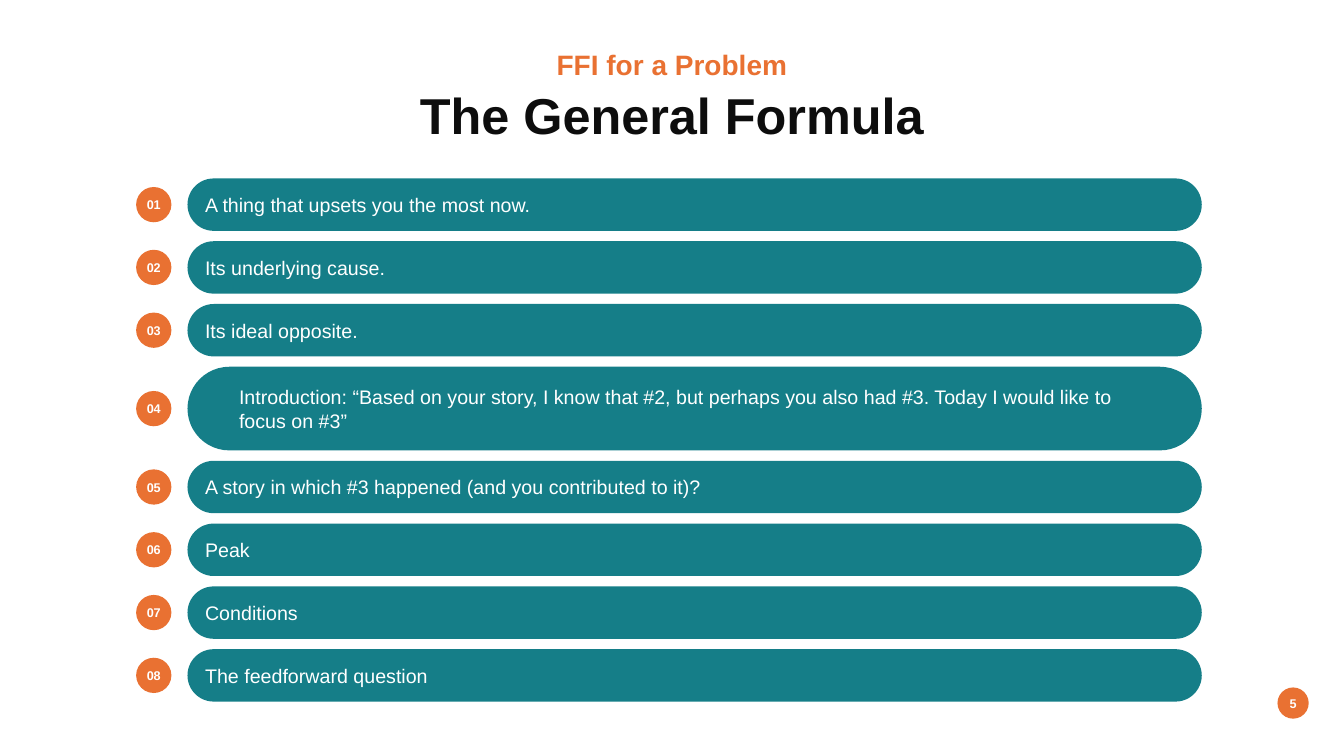
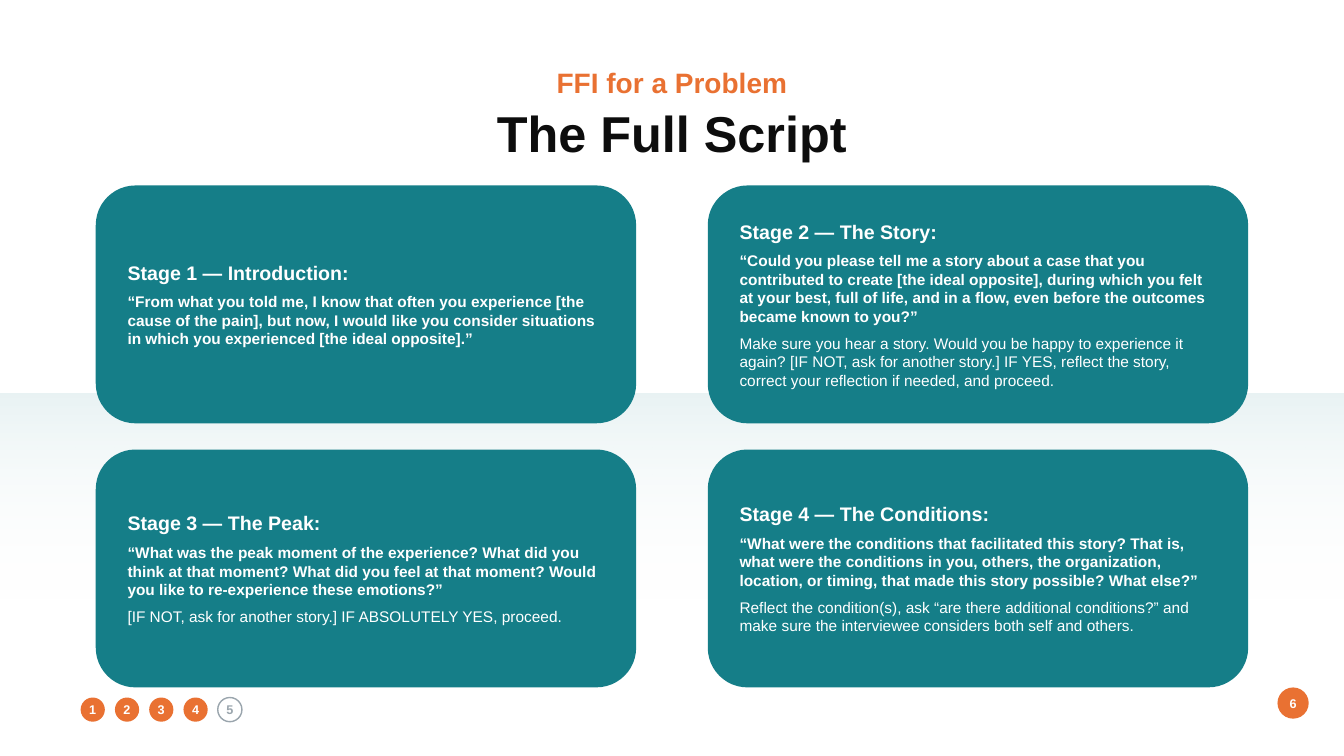
from dataclasses import dataclass

from pptx import Presentation
from pptx.dml.color import RGBColor
from pptx.enum.shapes import MSO_SHAPE
from pptx.enum.text import MSO_ANCHOR, MSO_AUTO_SIZE, PP_ALIGN
from pptx.oxml.ns import qn
from pptx.util import Pt

PX = 9144
RECT, ROUND, OVAL = MSO_SHAPE.RECTANGLE, MSO_SHAPE.ROUNDED_RECTANGLE, MSO_SHAPE.OVAL
MIDDLE, GROW = MSO_ANCHOR.MIDDLE, MSO_AUTO_SIZE.SHAPE_TO_FIT_TEXT
LEFT, CENTER = PP_ALIGN.LEFT, PP_ALIGN.CENTER
SIDES = ("margin_left", "margin_top", "margin_right", "margin_bottom")


@dataclass(frozen=True)
class Theme:
    font: str = "Arial"
    teal: str = "157E88"
    orange: str = "E97132"
    ink: str = "0D0D0D"
    grey: str = "9AA5AD"
    white: str = "FFFFFF"
    title: int = 36
    kicker: int = 20
    body: int = 14
    note: int = 11
    badge: int = 9


T = Theme()
SLIDE_W, SLIDE_H = 1333, 750
KICKER = "FFI for a Problem"

STEPS = [
    "A thing that upsets you the most now.",
    "Its underlying cause.",
    "Its ideal opposite.",
    "Introduction: “Based on your story, I know that #2, but perhaps you also had #3. "
    "Today I would like to focus on #3”",
    "A story in which #3 happened (and you contributed to it)?",
    "Peak",
    "Conditions",
    "The feedforward question",
]
TALL_STEP = 3

STAGES = [
    ("Stage 1 — Introduction:",
     "“From what you told me, I know that often you experience [the cause of the pain], "
     "but now, I would like you consider situations in which you experienced "
     "[the ideal opposite].”"),
    ("Stage 2 — The Story:",
     "“Could you please tell me a story about a case that you contributed to create "
     "[the ideal opposite], during which you felt at your best, full of life, and in a flow, "
     "even before the outcomes became known to you?”",
     "Make sure you hear a story. Would you be happy to experience it again? "
     "[IF NOT, ask for another story.] IF YES, reflect the story, correct your reflection "
     "if needed, and proceed."),
    ("Stage 3 — The Peak:",
     "“What was the peak moment of the experience? What did you think at that moment? "
     "What did you feel at that moment? Would you like to re-experience these emotions?”",
     "[IF NOT, ask for another story.] IF ABSOLUTELY YES, proceed."),
    ("Stage 4 — The Conditions:",
     "“What were the conditions that facilitated this story? That is, what were the "
     "conditions in you, others, the organization, location, or timing, that made this "
     "story possible? What else?”",
     "Reflect the condition(s), ask “are there additional conditions?” and make sure "
     "the interviewee considers both self and others."),
]


def emu(*lengths):
    return [round(n * PX) for n in lengths]


def assign(obj, values):
    for name, value in values.items():
        setattr(obj, name, value)


def write(tf, lines, align=LEFT, gap=0):
    for i, (text, size, color, bold) in enumerate(lines):
        p = tf.add_paragraph() if i else tf.paragraphs[0]
        before = Pt(gap if i else 0)
        assign(p, {"alignment": align, "space_before": before, "space_after": Pt(gap)})
        r = p.add_run()
        r.text = text
        assign(r.font, {"name": T.font, "size": Pt(size), "bold": bold})
        r.font.color.rgb = RGBColor.from_string(color)


def add_shape(slide, kind, box, fill=None, line=None, insets=(10, 5, 10, 5)):
    sp = slide.shapes.add_shape(kind, *emu(*box))
    sp.shadow.inherit = False
    if fill:
        sp.fill.solid()
        sp.fill.fore_color.rgb = RGBColor.from_string(fill)
    else:
        sp.fill.background()
    if line:
        sp.line.color.rgb = RGBColor.from_string(line)
        sp.line.width = Pt(1)
    else:
        sp.line.fill.background()
    assign(sp.text_frame, {"vertical_anchor": MIDDLE, "word_wrap": True})
    assign(sp.text_frame, dict(zip(SIDES, emu(*insets))))
    return sp


def add_badge(slide, x, y, size, text, active=True):
    fill, line, color = (T.orange, None, T.white) if active else (None, T.grey, T.grey)
    sp = add_shape(slide, OVAL, (x, y, size, size), fill, line, (0, 0, 0, 0))
    write(sp.text_frame, [(text, T.badge, color, True)], CENTER)


def add_heading(slide, box, title):
    tf = slide.shapes.add_textbox(*emu(*box)).text_frame
    assign(tf, {"word_wrap": True, "auto_size": GROW})
    write(tf, [(KICKER, T.kicker, T.orange, True), (title, T.title, T.ink, True)], CENTER)
    tf.paragraphs[0].space_after = Pt(2)


def add_steps(slide, box):
    x, y, w, h = box
    size, indent = 35, 51
    heights = [83 if i == TALL_STEP else 52 for i in range(len(STEPS))]
    gap = (h - sum(heights)) / (len(STEPS) - 1)
    for i, (text, height) in enumerate(zip(STEPS, heights)):
        insets = (39, 5, 39, 5) if i == TALL_STEP else (10, 5, 10, 5)
        sp = add_shape(slide, ROUND, (x + indent, y, w - indent, height), T.teal, insets=insets)
        sp.adjustments[0] = 0.5
        write(sp.text_frame, [(text, T.body, T.white, False)])
        add_badge(slide, x, y + (height - size) / 2, size, f"{i + 1:02}")
        y += height + gap


def add_band(slide, box):
    sp = add_shape(slide, RECT, box, T.white)
    sp.fill.gradient()
    sp.fill.gradient_angle = 270
    for stop, color in zip(sp.fill.gradient_stops, (T.teal, T.white)):
        stop.color.rgb = RGBColor.from_string(color)
    for clr, alpha in zip(sp.element.spPr.iter(qn("a:srgbClr")), (10000, 0)):
        clr.makeelement(qn("a:alpha"))
        node = clr.makeelement(qn("a:alpha"), {"val": str(alpha)})
        clr.append(node)


def add_stages(slide, box):
    x, y, w, h = box
    card_w, card_h = 536, 236
    for i, (head, *notes) in enumerate(STAGES):
        row, col = divmod(i, 2)
        place = (x + col * (w - card_w), y + row * (h - card_h), card_w, card_h)
        sp = add_shape(slide, ROUND, place, T.teal, insets=(20, 12, 20, 12))
        lines = [(head, T.body, T.white, True)]
        lines += [(note, T.note, T.white, n == 0) for n, note in enumerate(notes)]
        write(sp.text_frame, lines, gap=3)


def add_progress(slide, box, done, total):
    x, y, w, size = box
    pitch = (w - size) / (total - 1)
    for i in range(total):
        add_badge(slide, x + i * pitch, y, size, str(i + 1), i < done)


def add_slide(prs, number, title, title_top, band=None):
    slide = prs.slides.add_slide(prs.slide_layouts[6])
    if band:
        add_band(slide, band)
    add_heading(slide, (251, title_top, 831, 104), title)
    add_badge(slide, 1267, 682, 31, str(number))
    return slide


def main():
    prs = Presentation()
    prs.slide_width, prs.slide_height = emu(SLIDE_W, SLIDE_H)

    formula = add_slide(prs, 5, "The General Formula", 42)
    add_steps(formula, (135, 177, 1057, 519))

    script = add_slide(prs, 6, "The Full Script", 60, band=(0, 390, SLIDE_W, 216))
    add_stages(script, (95, 184, 1143, 498))
    add_progress(script, (80, 692, 160, 24), done=4, total=5)

    prs.save("out.pptx")


if __name__ == "__main__":
    main()
